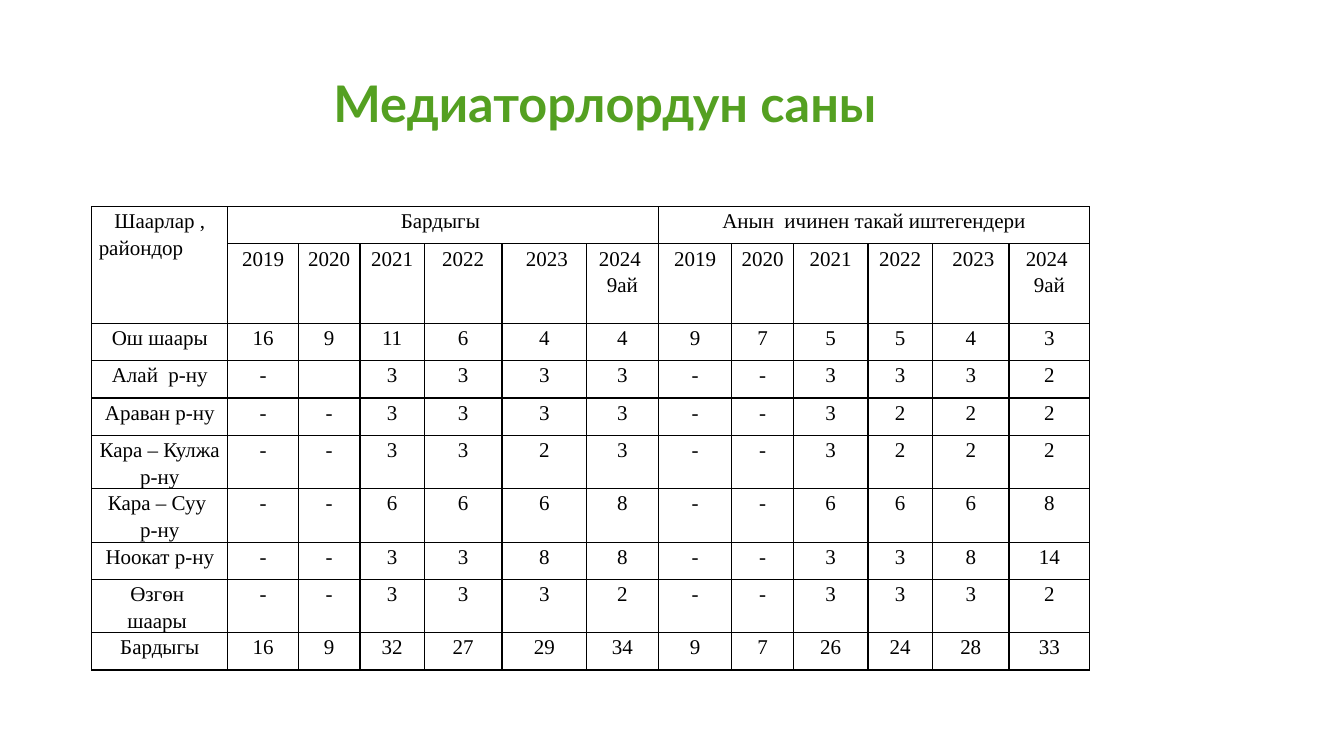
import dataclasses

import lxml.etree
import pptx
import pptx.dml.color
import pptx.enum.text
import pptx.oxml.ns
import pptx.util

Inches = pptx.util.Inches
Pt = pptx.util.Pt
ALIGN = pptx.enum.text.PP_ALIGN
ANCHOR = pptx.enum.text.MSO_ANCHOR


@dataclasses.dataclass(frozen=True)
class Theme:
    title_font: str = "Lato"
    table_font: str = "Times New Roman"
    title_color: str = "54A021"
    text_color: str = "000000"
    border_color: str = "000000"
    title_size: float = 36
    table_size: float = 15
    border_width: float = 1


def write_text(tf, text, *, font, size, color, bold=False, spacing=1.0, aligns=(ALIGN.CENTER,)):
    """Write one paragraph per line; the last alignment holds for the remaining lines."""
    for i, line in enumerate(text.split("\n")):
        p = tf.add_paragraph() if i else tf.paragraphs[0]
        p.alignment = aligns[min(i, len(aligns) - 1)]
        p.line_spacing = spacing
        r = p.add_run()
        r.text = line
        r.font.name = font
        r.font.size = Pt(size)
        r.font.bold = bold
        r.font.color.rgb = pptx.dml.color.RGBColor.from_string(color)


class SlideBuilder:
    def __init__(self, prs, theme):
        self.theme = theme
        self.s = prs.slides.add_slide(prs.slide_layouts.get_by_name("Title Only"))

    def title(self, text, left, top, width, height, indent):
        sp = self.s.shapes.title
        sp.left, sp.top, sp.width, sp.height = map(Inches, (left, top, width, height))
        tf = sp.text_frame
        tf.word_wrap = True
        tf.auto_size = pptx.enum.text.MSO_AUTO_SIZE.NONE
        tf.vertical_anchor = ANCHOR.TOP
        tf.margin_left = Inches(indent)
        write_text(tf, text, font=self.theme.title_font, size=self.theme.title_size,
                   color=self.theme.title_color, bold=True)

    def borders(self, cell):
        tc_pr = cell._tc.get_or_add_tcPr()
        qn = pptx.oxml.ns.qn
        for side in ("lnL", "lnR", "lnT", "lnB"):
            ln = lxml.etree.SubElement(tc_pr, qn(f"a:{side}"), w=str(Pt(self.theme.border_width)))
            fill = lxml.etree.SubElement(ln, qn("a:solidFill"))
            lxml.etree.SubElement(fill, qn("a:srgbClr"), val=self.theme.border_color)

    def cell(self, cell, text, aligns):
        self.borders(cell)
        cell.fill.background()
        cell.margin_left = cell.margin_right = Inches(0.07)
        cell.margin_top = cell.margin_bottom = 0
        cell.vertical_anchor = ANCHOR.TOP
        if text:
            write_text(cell.text_frame, text, font=self.theme.table_font,
                       size=self.theme.table_size, color=self.theme.text_color,
                       spacing=1.15, aligns=aligns)

    def table(self, rows, left, top, widths, heights, spans, aligns):
        """Spans maps the top-left cell of a merge to its bottom-right cell."""
        frame = self.s.shapes.add_table(len(rows), len(widths), Inches(left), Inches(top),
                                        Inches(sum(widths)), Inches(sum(heights)))
        table = frame.table
        table.first_row = table.horz_banding = False
        for column, width in zip(table.columns, widths):
            column.width = Inches(width)
        for row, height in zip(table.rows, heights):
            row.height = Inches(height)
        for i, row in enumerate(rows):
            for j, text in enumerate(row):
                self.cell(table.cell(i, j), text, aligns.get((i, j), (ALIGN.CENTER,)))
        for start, end in spans.items():
            table.cell(*start).merge(table.cell(*end))


YEARS = ["2019", "2020", "2021", "2022", " 2023", "2024  9ай"]
COUNTS = [
    ("Ош шаары", "16 9 11 6 4 4 9 7 5 5 4 3"),
    ("Алай  р-ну", "- _ 3 3 3 3 - - 3 3 3 2"),
    ("Араван р-ну", "- - 3 3 3 3 - - 3 2 2 2"),
    ("Кара – Кулжа р-ну", "- - 3 3 2 3 - - 3 2 2 2"),
    ("Кара – Суу \nр-ну", "- - 6 6 6 8 - - 6 6 6 8"),
    ("Ноокат р-ну", "- - 3 3 8 8 - - 3 3 8 14"),
    ("Өзгөн  шаары ", "- - 3 3 3 2 - - 3 3 3 2"),
    ("Бардыгы", "16 9 32 27 29 34 9 7 26 24 28 33"),
]
WIDTHS = [1.35, 0.7, 0.61, 0.64, 0.77, 0.84, 0.71, 0.73, 0.61, 0.74, 0.64, 0.76, 0.8]
ONE_LINE, TWO_LINES, YEAR_ROW = 0.37, 0.53, 0.79
TWO_LINE_ROWS = (5, 6, 8)


def main():
    prs = pptx.Presentation()
    prs.slide_width, prs.slide_height = Inches(13.33), Inches(7.5)
    slide = SlideBuilder(prs, Theme())
    slide.title("Медиаторлордун саны", 1.07, 0.67, 9.1, 1.02, indent=0.86)

    gap = [""] * (len(YEARS) - 1)
    rows = [
        ["Шаарлар ,\nрайондор", "Бардыгы ", *gap, "Анын  ичинен такай иштегендери", *gap],
        ["", *YEARS, *YEARS],
    ]
    rows += [[place, *counts.replace("_", "").split(" ")] for place, counts in COUNTS]
    heights = [TWO_LINES if i in TWO_LINE_ROWS else ONE_LINE for i in range(len(rows))]
    heights[1] = YEAR_ROW
    slide.table(rows, 0.91, 2.05, WIDTHS, heights,
                spans={(0, 0): (1, 0), (0, 1): (0, 6), (0, 7): (0, 12)},
                aligns={(0, 0): (ALIGN.CENTER, ALIGN.LEFT)})
    prs.save("out.pptx")


if __name__ == "__main__":
    main()
